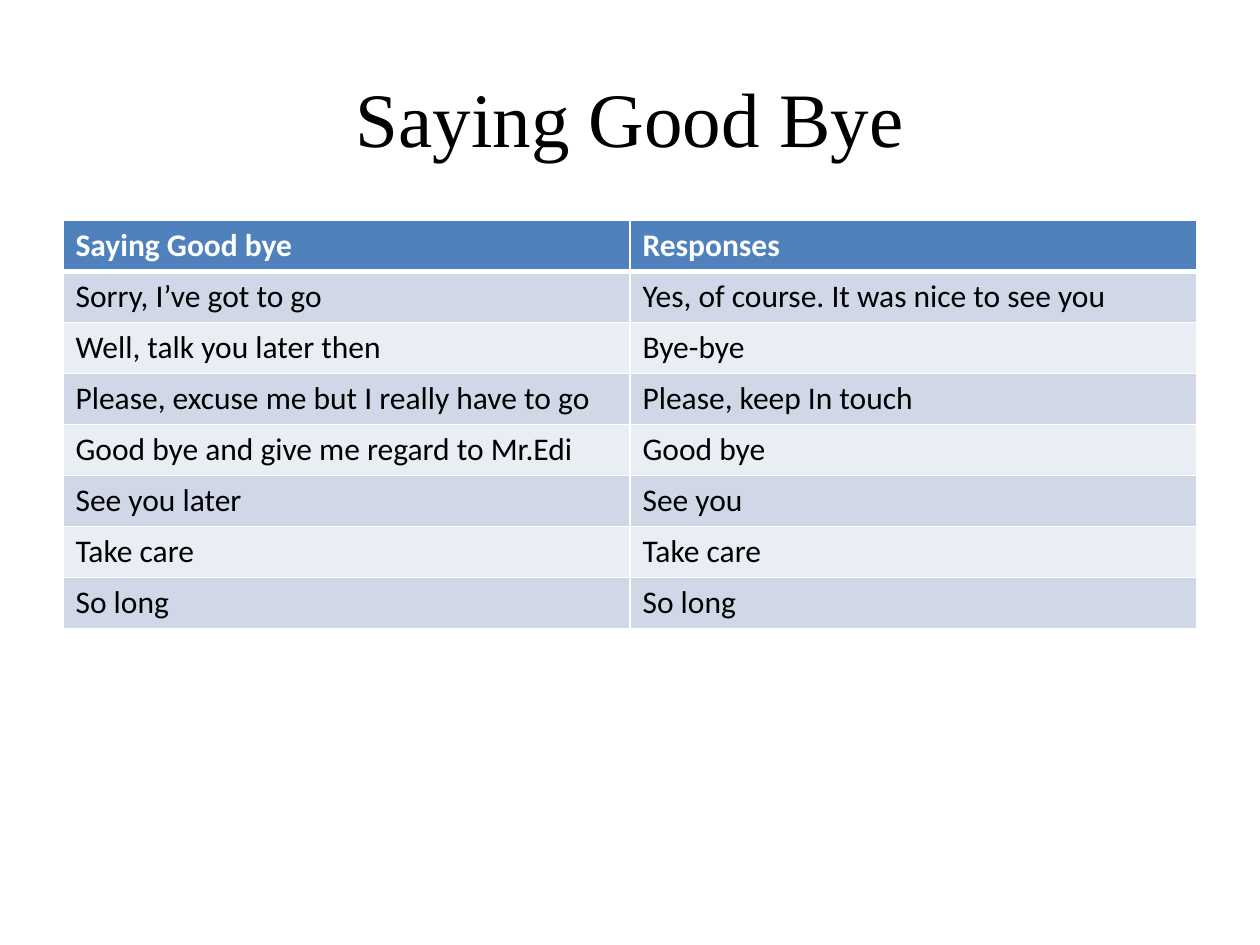
"""Build a slide with a table of farewells and their responses."""
from dataclasses import dataclass
from typing import NamedTuple

from lxml.etree import SubElement
from pptx import Presentation
from pptx.dml.color import RGBColor
from pptx.enum.text import MSO_ANCHOR, PP_ALIGN
from pptx.oxml.ns import qn
from pptx.util import Inches, Pt


@dataclass(frozen=True)
class Theme:
    title_font: str = "Times New Roman"
    table_font: str = "Calibri"
    title_size: int = 44
    table_size: int = 18
    text: str = "000000"
    header_text: str = "FFFFFF"
    header_fill: str = "4F81BD"
    bands: tuple[str, str] = ("D0D8E8", "E9EDF4")
    border: str = "FFFFFF"
    thin: int = 1
    thick: int = 3


class Exchange(NamedTuple):
    farewell: str
    response: str


THEME = Theme()
ROW_HEIGHT = 0.405
COLUMN_WIDTH = 4.5
EXCHANGES = [
    Exchange("Saying Good bye", "Responses"),
    Exchange("Sorry, I’ve got to go", "Yes, of course. It was nice to see you"),
    Exchange("Well, talk you later then", "Bye-bye"),
    Exchange("Please, excuse me but I really have to go", "Please, keep In touch"),
    Exchange("Good bye and give me regard to Mr.Edi", "Good bye"),
    Exchange("See you later", "See you"),
    Exchange("Take care", "Take care"),
    Exchange("So long", "So long"),
]


def write_text(paragraph, text: str, color: str, **formats) -> None:
    run = paragraph.add_run()
    run.text = text
    for name, value in formats.items():
        setattr(run.font, name, value)
    run.font.color.rgb = RGBColor.from_string(color)


def add_title(slide, text: str) -> None:
    shape = slide.shapes.add_textbox(Inches(0.5), Inches(0.3), Inches(9), Inches(1.25))
    frame = shape.text_frame
    for name, value in {"word_wrap": True, "vertical_anchor": MSO_ANCHOR.MIDDLE}.items():
        setattr(frame, name, value)
    paragraph = frame.paragraphs[0]
    paragraph.alignment = PP_ALIGN.CENTER
    write_text(paragraph, text, THEME.text, name=THEME.title_font, size=Pt(THEME.title_size))


def set_borders(cell, widths: dict[str, int]) -> None:
    properties = cell._tc.get_or_add_tcPr()
    for side, width in widths.items():
        line = SubElement(properties, qn(f"a:ln{side}"), w=str(Pt(width)))
        SubElement(SubElement(line, qn("a:solidFill")), qn("a:srgbClr"), val=THEME.border)


def fill_cell(cell, text: str, row: int) -> None:
    is_header = row == 0
    set_borders(cell, {
        "L": THEME.thin,
        "R": THEME.thin,
        "T": THEME.thick if row == 1 else THEME.thin,
        "B": THEME.thick if is_header else THEME.thin,
    })
    cell.fill.solid()
    fill = THEME.header_fill if is_header else THEME.bands[(row - 1) % 2]
    cell.fill.fore_color.rgb = RGBColor.from_string(fill)
    color = THEME.header_text if is_header else THEME.text
    write_text(cell.text_frame.paragraphs[0], text, color,
               name=THEME.table_font, size=Pt(THEME.table_size), bold=is_header)


def add_exchange_table(slide, exchanges: list[Exchange]) -> None:
    column_count = len(Exchange._fields)
    table = slide.shapes.add_table(
        len(exchanges), column_count, Inches(0.5), Inches(1.75),
        Inches(COLUMN_WIDTH * column_count), Inches(ROW_HEIGHT * len(exchanges)),
    ).table
    for row, exchange in enumerate(exchanges):
        for column, text in enumerate(exchange):
            fill_cell(table.cell(row, column), text, row)


def main() -> None:
    presentation = Presentation()
    presentation.slide_width, presentation.slide_height = Inches(10), Inches(7.5)
    slide = presentation.slides.add_slide(presentation.slide_layouts[6])
    add_title(slide, "Saying Good Bye")
    add_exchange_table(slide, EXCHANGES)
    presentation.save("out.pptx")


if __name__ == "__main__":
    main()
